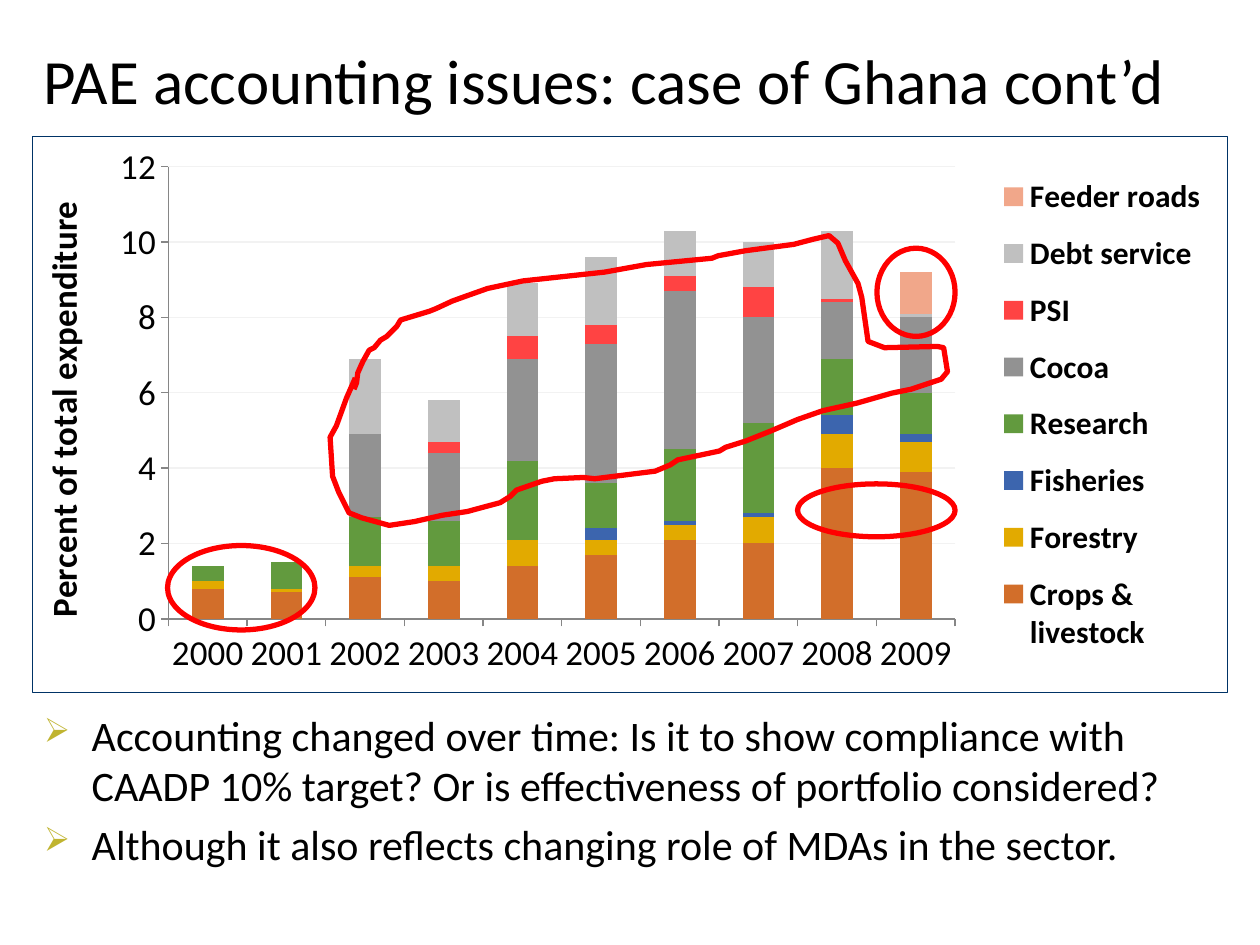
from dataclasses import dataclass

from lxml import etree
from pptx import Presentation, util as u
from pptx.chart.data import CategoryChartData
from pptx.dml.color import RGBColor
from pptx.enum import chart as charts, shapes, text
from pptx.oxml import parse_xml
from pptx.oxml.ns import nsdecls, qn

COLUMNS, ROWS = 100, 75


@dataclass(frozen=True)
class Theme:
    """Colours, font and type sizes of the slide."""
    font: str = "Calibri"
    ink: str = "000000"
    mark: str = "FF0000"
    bullet: str = "C0B430"
    border: str = "003366"
    grid: str = "F2F2F2"
    axis: str = "868686"
    title: int = 36
    body: int = 24
    labels: int = 20
    legend: int = 18
    hairline: float = 0.75
    stroke: int = 3


@dataclass(frozen=True)
class Box:
    """A region in grid columns and rows."""
    left: float
    top: float
    width: float
    height: float

    def inside(self, left, top, width, height):
        """Return a box offset from this one's corner."""
        return Box(self.left + left, self.top + top, width, height)

    def lengths(self):
        """Return left, top, width and height as slide lengths."""
        return [cells(part) for part in (self.left, self.top, self.width, self.height)]


THEME = Theme()
YEARS = [str(year) for year in range(2000, 2010)]
SPENDING = {
    "Crops & livestock": ("D26E2A", [0.8, 0.7, 1.1, 1, 1.4, 1.7, 2.1, 2, 4, 3.9]),
    "Forestry": ("E2AA00", [0.2, 0.1, 0.3, 0.4, 0.7, 0.4, 0.4, 0.7, 0.9, 0.8]),
    "Fisheries": ("3C65AE", [0, 0, 0, 0, 0, 0.3, 0.1, 0.1, 0.5, 0.2]),
    "Research": ("629A3E", [0.4, 0.7, 1.3, 1.2, 2.1, 1.2, 1.9, 2.4, 1.5, 1.1]),
    "Cocoa": ("929292", [0, 0, 2.2, 1.8, 2.7, 3.7, 4.2, 2.8, 1.5, 2]),
    "PSI": ("FF4343", [0, 0, 0, 0.3, 0.6, 0.5, 0.4, 0.8, 0.1, 0]),
    "Debt service": ("C0C0C0", [0, 0, 2, 1.1, 1.4, 1.8, 1.2, 1.2, 1.8, 0.1]),
    "Feeder roads": ("F1A78A", [0, 0, 0, 0, 0, 0, 0, 0, 0, 1.1]),
}
POINTS = [
    "Accounting changed over time: Is it to show compliance with CAADP 10% target? "
    "Or is effectiveness of portfolio considered?",
    "Although it also reflects changing role of MDAs in the sector.",
]
RINGS = [(10.8, 32.5, 11.7, 6.7), (60.8, 27.6, 12.5, 4.2), (67.1, 8.9, 6.2, 7)]
OUTLINE = [
    (25.7, 19.2), (25, 20.8), (24.2, 23), (23.7, 23.9), (23.9, 27), (24.4, 28.3),
    (25.2, 29.9), (26.2, 30.3), (28.4, 30.9), (30.4, 30.6), (32.6, 30.1), (34.6, 29.8),
    (35.7, 29.5), (37.2, 29.1), (38, 28.6), (38.5, 28.1), (40.5, 27.4), (41.5, 27.2),
    (43.8, 27.1), (44.7, 27.2), (49.5, 26.6), (50.7, 26.1), (51.3, 25.7), (54.6, 25),
    (55.1, 24.7), (56.7, 24.2), (58.7, 23.4), (60.8, 22.5), (62.8, 21.8), (65.5, 21.2),
    (68.3, 20.4), (69.8, 20.1), (72.2, 19.3), (72.7, 18.7), (72.4, 16.8), (71.9, 16.7),
    (67.7, 16.8), (66.4, 16.3), (65.9, 12.8), (65.6, 11.7), (64.6, 9.9), (64, 8.5),
    (63.3, 7.9), (62, 8.2), (60.5, 8.6), (56.7, 9.1), (54.5, 9.5), (54, 9.7),
    (48.8, 10.2), (45.5, 10.8), (39, 11.5), (36.2, 12.1), (34.5, 12.7), (33.4, 13.1),
    (32.1, 13.7), (31.6, 13.9), (29.3, 14.6), (29, 15.1), (28.2, 15.9), (27.7, 16.2),
    (27.2, 16.8), (26.8, 17), (26.3, 17.9), (25.9, 18.8), (25.8, 19.6), (25.6, 20.1),
]


def cells(count):
    """Convert grid cells to a slide length."""
    return int(count * u.Inches(10) / COLUMNS)


def style_font(font, size, bold=False):
    """Apply the theme's typeface and ink."""
    font.name, font.size, font.bold = THEME.font, u.Pt(size), bold
    font.color.rgb = RGBColor.from_string(THEME.ink)


def style_line(line, color, width):
    """Set a line's colour and width in points."""
    line.color.rgb = RGBColor.from_string(color)
    line.width = u.Pt(width)


def add_text(page, box, lines, size, anchor):
    """Place paragraphs in a wrapping text box and return them."""
    frame = page.shapes.add_textbox(*box.lengths()).text_frame
    frame.word_wrap, frame.vertical_anchor = True, anchor
    frame.text = "\n".join(lines)
    for paragraph in frame.paragraphs:
        for span in paragraph.runs:
            style_font(span.font, size)
    return frame.paragraphs


def add_title(page, box):
    """Place the slide title."""
    heading = ["PAE accounting issues: case of Ghana cont’d"]
    add_text(page, box, heading, THEME.title, text.MSO_ANCHOR.MIDDLE)[0].line_spacing = 0.9


def add_points(page, box):
    """Place the arrow-bulleted conclusions."""
    for index, paragraph in enumerate(
            add_text(page, box, POINTS, THEME.body, text.MSO_ANCHOR.TOP)):
        if index:
            paragraph.space_before = u.Pt(THEME.body * 0.2)
        properties = paragraph._p.get_or_add_pPr()
        properties.set("marL", str(u.Inches(0.38)))
        properties.set("indent", str(-u.Inches(0.38)))
        color = etree.SubElement(properties, qn("a:buClr"))
        etree.SubElement(color, qn("a:srgbClr"), val=THEME.bullet)
        etree.SubElement(properties, qn("a:buSzPct"), val="80000")
        etree.SubElement(properties, qn("a:buChar"), char="➢")


def set_layout(parent, position, target, shares):
    """Fix a chart part's place as shares of the chart."""
    for old in parent.findall(qn("c:layout")):
        parent.remove(old)
    inner = f'<c:layoutTarget val="{target}"/>' if target else ""
    modes = '<c:xMode val="edge"/><c:yMode val="edge"/>'
    sides = "".join(f'<c:{name} val="{share}"/>' for name, share in zip("xywh", shares))
    parent.insert(position, parse_xml(
        f'<c:layout {nsdecls("c")}><c:manualLayout>{inner}{modes}{sides}'
        '</c:manualLayout></c:layout>'))


def add_spending_chart(page, box):
    """Place the stacked columns of spending by year."""
    data = CategoryChartData()
    data.categories = YEARS
    for name, (_, values) in SPENDING.items():
        data.add_series(name, values)
    chart = page.shapes.add_chart(
        charts.XL_CHART_TYPE.COLUMN_STACKED, *box.lengths(), data).chart
    style_font(chart.font, 10)
    chart.has_title = False
    plot = chart.plots[0]
    plot.gap_width, plot.overlap, plot.vary_by_categories = 150, 100, False
    for series, (color, _) in zip(plot.series, SPENDING.values()):
        series.format.fill.solid()
        series.format.fill.fore_color.rgb = RGBColor.from_string(color)

    for axis in (chart.category_axis, chart.value_axis):
        axis.major_tick_mark = charts.XL_TICK_MARK.OUTSIDE
        style_font(axis.tick_labels.font, THEME.labels)
        style_line(axis.format.line, THEME.axis, THEME.hairline)
    scale = chart.value_axis
    scale.minimum_scale, scale.maximum_scale, scale.major_unit = 0, 12, 2
    style_line(scale.major_gridlines.format.line, THEME.grid, THEME.hairline)
    caption = scale.axis_title.text_frame
    caption.text = "Percent of total expenditure"
    style_font(caption.paragraphs[0].runs[0].font, THEME.labels, True)

    chart.has_legend = True
    chart.legend.position = charts.XL_LEGEND_POSITION.RIGHT
    chart.legend.include_in_layout = False
    style_font(chart.legend.font, THEME.legend, True)
    set_layout(chart.legend._element, 1, None, (0.8, 0.04, 0.19, 0.92))
    root = chart._chartSpace
    set_layout(root.chart.plotArea, 0, "inner", (0.114, 0.054, 0.658, 0.814))
    root.chart.addnext(parse_xml(
        f'<c:spPr {nsdecls("c", "a")}><a:noFill/><a:ln w="{u.Pt(THEME.hairline)}">'
        f'<a:solidFill><a:srgbClr val="{THEME.border}"/></a:solidFill></a:ln></c:spPr>'))


def add_marks(page, box):
    """Ring the changes in accounting over the chart box."""
    marks = [page.shapes.add_shape(shapes.MSO_SHAPE.OVAL, *box.inside(*ring).lengths())
             for ring in RINGS]
    trace = [(cells(box.left + x), cells(box.top + y)) for x, y in OUTLINE]
    builder = page.shapes.build_freeform(*trace[0])
    builder.add_line_segments(trace[1:], close=False)
    for mark in marks + [builder.convert_to_shape()]:
        mark.shadow.inherit = False
        mark.fill.background()
        style_line(mark.line, THEME.mark, THEME.stroke)


def main():
    """Build and save the deck."""
    deck = Presentation()
    deck.slide_width, deck.slide_height = cells(COLUMNS), cells(ROWS)
    page = deck.slides.add_slide(deck.slide_layouts[6])
    chart_box = Box(2.5, 10.8, 95, 44.2)
    add_title(page, Box(2.5, 2.5, 94.2, 8.3))
    add_points(page, Box(2.5, 55.8, 95, 13.3))
    add_spending_chart(page, chart_box)
    add_marks(page, chart_box)
    deck.save("out.pptx")


if __name__ == "__main__":
    main()
